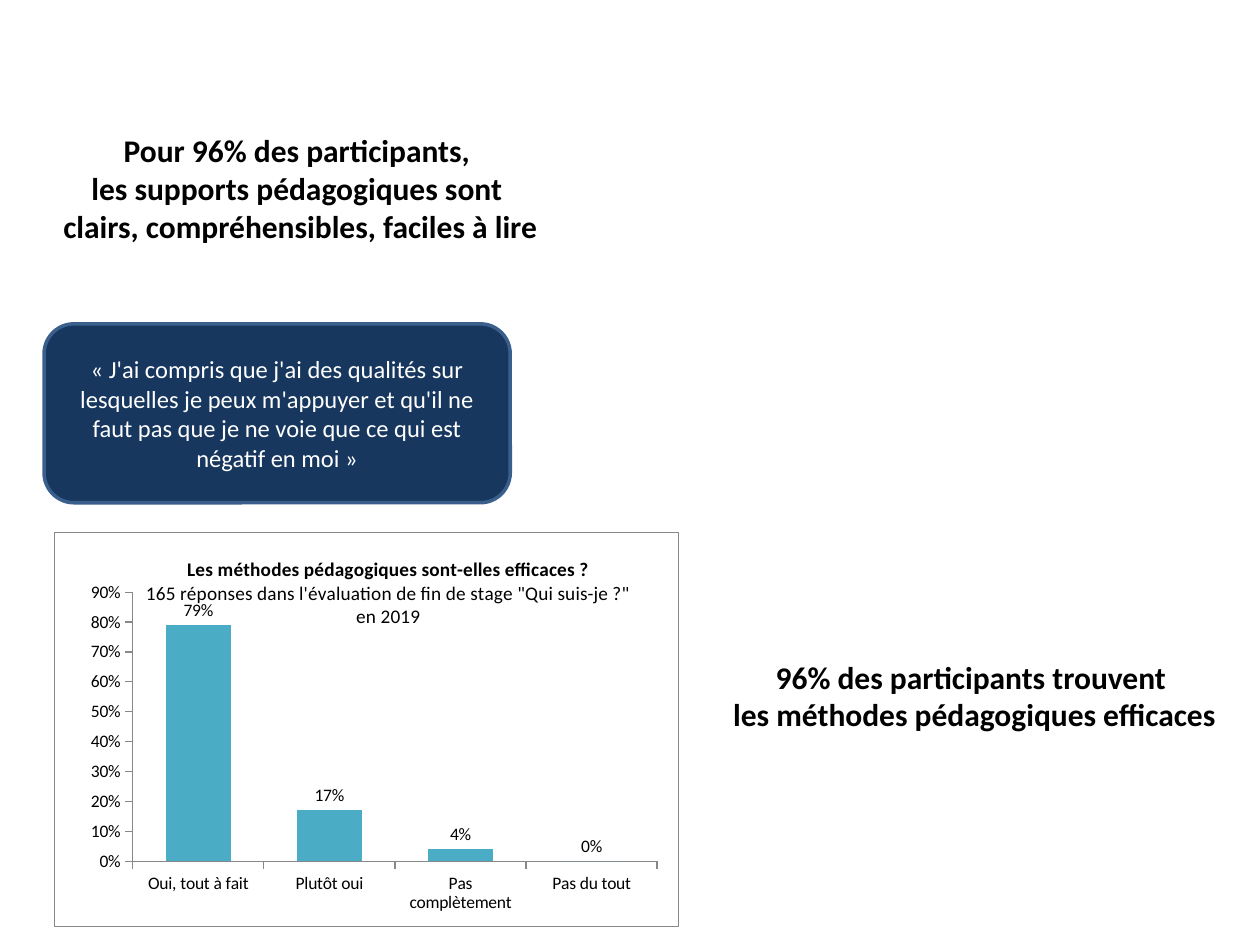
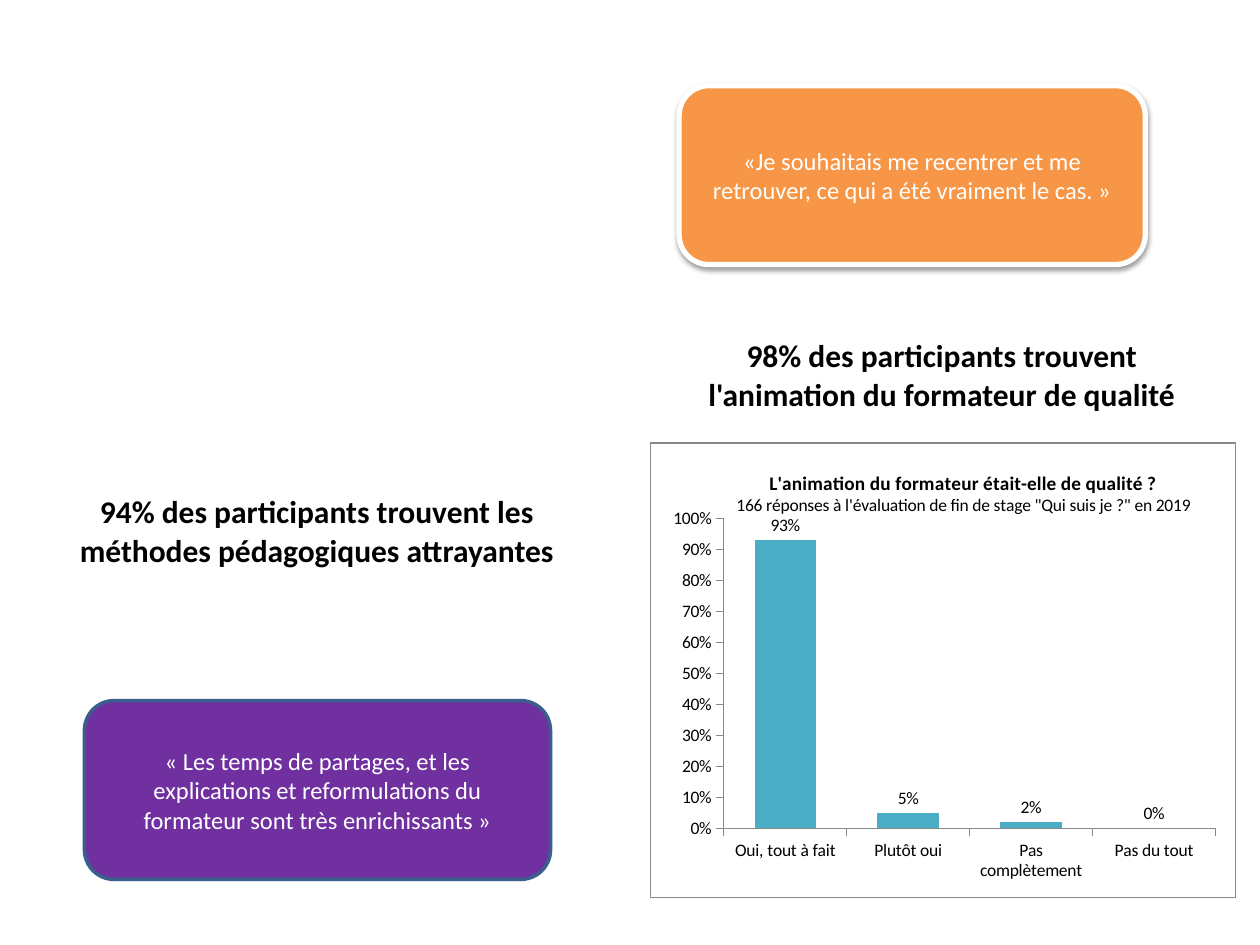
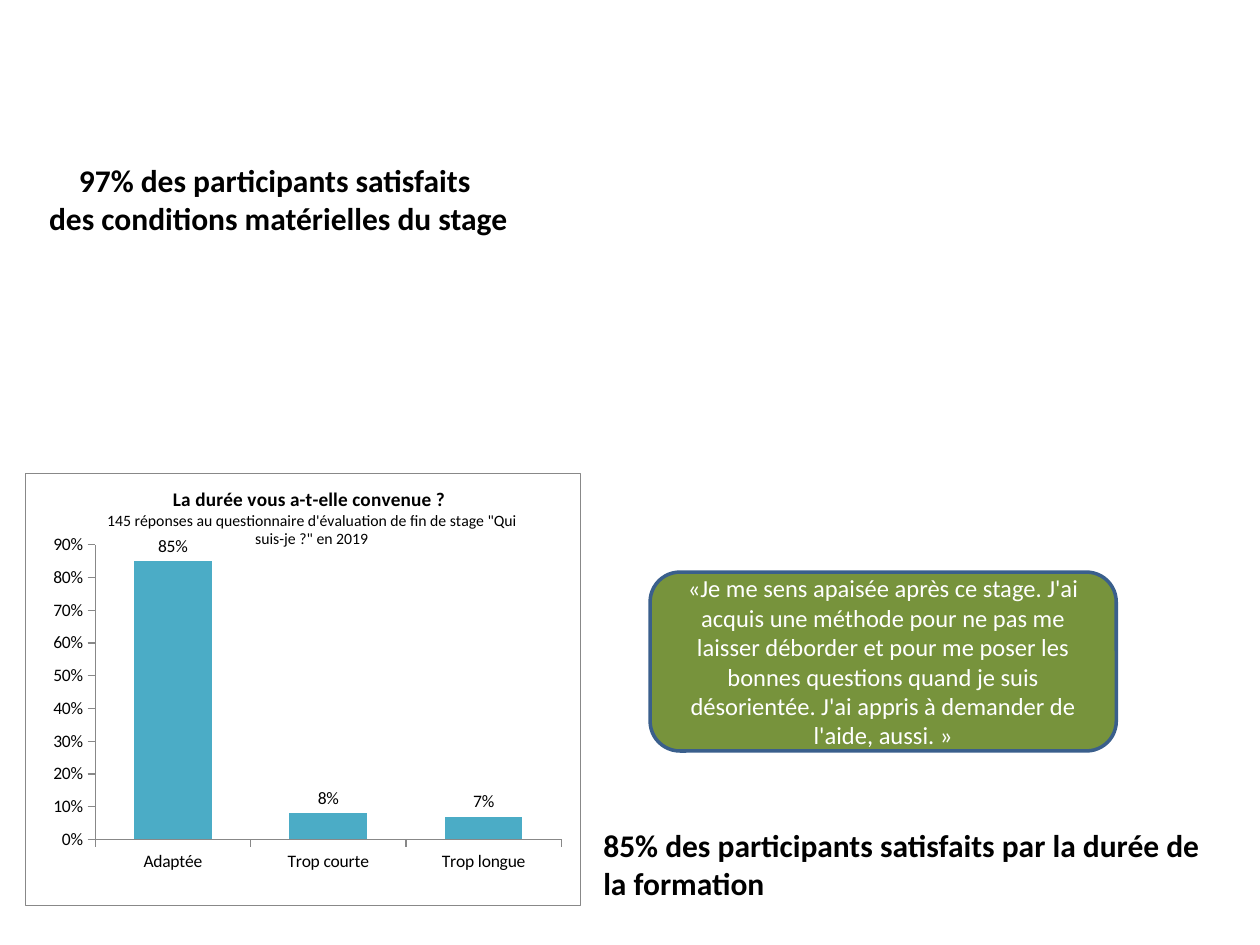
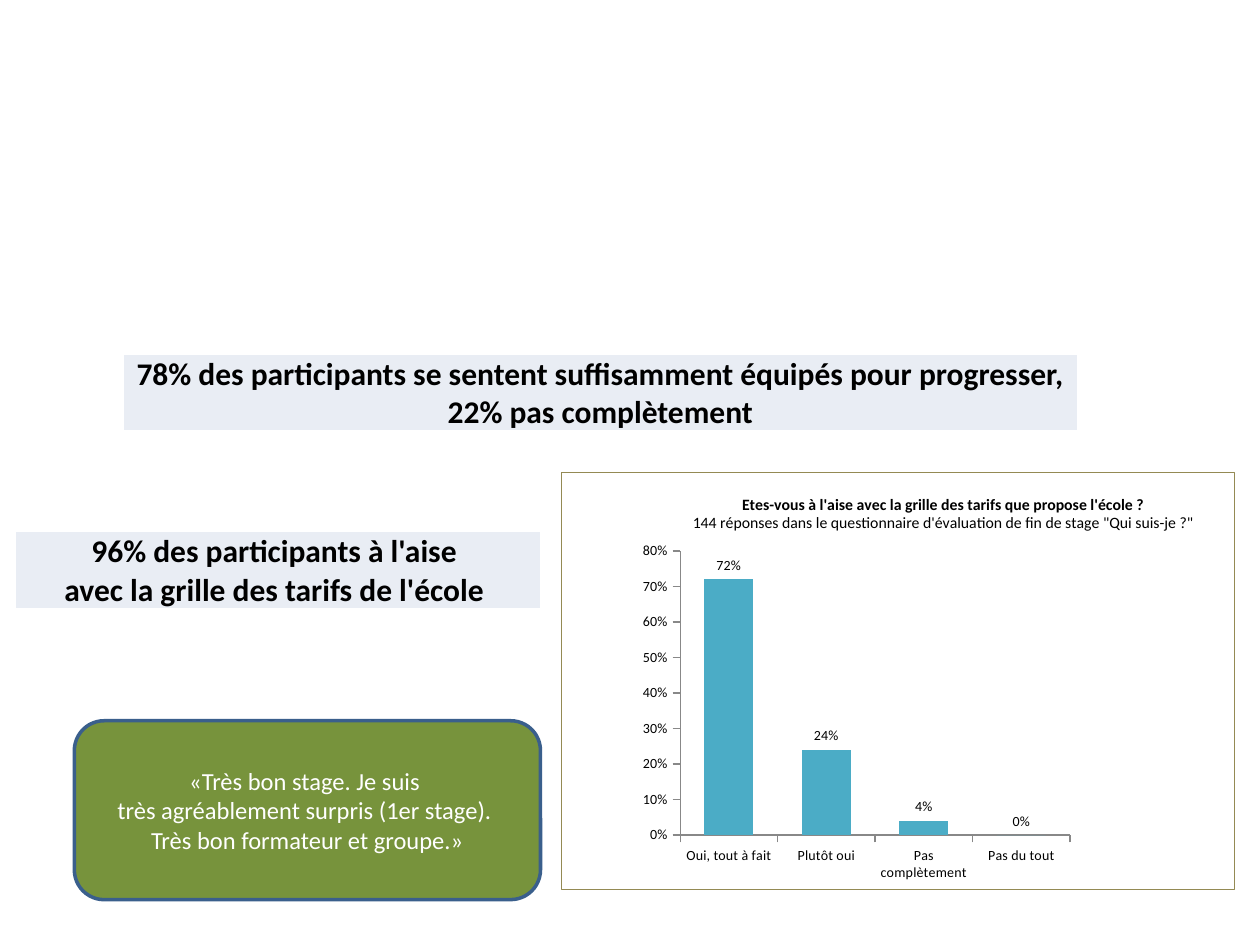
"""Build four slides of training evaluation results: statements, quotes and charts."""
from pptx import Presentation
from pptx import util as u
from pptx.chart.data import CategoryChartData
from pptx.dml.color import RGBColor
from pptx.enum import chart as ch, shapes, text
from pptx.oxml import ns, parse_xml

PX = 9144
FONT = "Calibri"
COLORS = {
    "ink": "000000", "paper": "FFFFFF", "band": "E9EDF4", "bar": "4BACC6",
    "axis": "888888", "olive": "948A54", "outline": "3A5F8C", "navy": "17375E",
    "orange": "F79646", "purple": "7030A0", "green": "77933C",
}
RGB = {name: RGBColor.from_string(value) for name, value in COLORS.items()}
ANSWERS = ["Oui, tout à fait", "Plutôt oui", "Pas complètement", "Pas du tout"]
DURATIONS = ["Adaptée", "Trop courte", "Trop longue"]


def style_text(frame, size, color, bold=False, align=text.PP_ALIGN.CENTER):
    """Format every paragraph and run of a text frame."""
    for paragraph in frame.paragraphs:
        paragraph.alignment = align
        for run in paragraph.runs:
            run.font.name = FONT
            run.font.size = u.Pt(size)
            run.font.bold = bold
            run.font.color.rgb = RGB[color]


def manual_layout(inner, **places):
    """Return a chart layout element with fractions of the chart area."""
    target = '<c:layoutTarget val="inner"/>' if inner else ""
    modes = "".join(f'<c:{axis}Mode val="edge"/>' for axis in "xy")
    values = "".join(f'<c:{key} val="{value}"/>' for key, value in places.items())
    return parse_xml(f'<c:layout {ns.nsdecls("c")}><c:manualLayout>{target}{modes}{values}'
                     "</c:manualLayout></c:layout>")


deck = Presentation()
deck.slide_width, deck.slide_height = 1000 * PX, 750 * PX
TITLE_ONLY, BLANK = deck.slide_layouts[5], deck.slide_layouts[6]
slides = [deck.slides.add_slide(layout) for layout in (TITLE_ONLY, BLANK, TITLE_ONLY, BLANK)]

CENTER, LEFT = text.PP_ALIGN.CENTER, text.PP_ALIGN.LEFT
statements = [
    (0, True, (8, 99, 461, 101), CENTER,
     "Pour 96% des participants, \vles supports pédagogiques sont \n"
     "clairs, compréhensibles, faciles à lire"),
    (0, False, (547, 517, 453, 71), CENTER,
     "96% des participants trouvent \vles méthodes pédagogiques efficaces"),
    (2, True, (-3, 123, 448, 71), CENTER,
     "97% des participants satisfaits \vdes conditions matérielles du stage"),
    (2, False, (469, 651, 500, 71), LEFT,
     "85% des participants satisfaits par la durée de la formation"),
]
for index, is_title, place, align, wording in statements:
    left, top, width, height = (PX * length for length in place)
    if is_title:
        statement = slides[index].shapes.title
        statement.left, statement.top = left, top
        statement.width, statement.height = width, height
    else:
        statement = slides[index].shapes.add_textbox(left, top, width, height)
    frame = statement.text_frame
    frame.text = wording
    frame.word_wrap = True
    frame.auto_size = text.MSO_AUTO_SIZE.SHAPE_TO_FIT_TEXT
    frame.vertical_anchor = text.MSO_ANCHOR.TOP
    style_text(frame, 18, "ink", bold=True, align=align)

charts = [
    (0, (43, 422, 496, 314), ANSWERS, (0.79, 0.17, 0.04, 0), 0.9, 10,
     "Les méthodes pédagogiques sont-elles efficaces ?", 11,
     "165 réponses dans l'évaluation de fin de stage \"Qui suis-je ?\" en 2019", 11,
     (0.14, 0.05), (0.125, 0.152, 0.841), ("axis", 0.75)),
    (1, (516, 351, 465, 362), ANSWERS, (0.93, 0.05, 0.02, 0), 1, 10,
     "L'animation du formateur était-elle de qualité ?", 11,
     "166 réponses à l'évaluation de fin de stage \"Qui suis je ?\" en 2019", 10,
     (0.14, 0.05), (0.125, 0.166, 0.841), ("axis", 0.75)),
    (2, (20, 375, 441, 344), DURATIONS, (0.85, 0.08, 0.07), 0.9, 10,
     "La durée vous a-t-elle convenue ? ", 11,
     "145 réponses au questionnaire d'évaluation de fin de stage \"Qui suis-je ?\" en 2019", 9,
     (0.14, 0.02), (0.125, 0.166, 0.841), ("axis", 0.75)),
    (3, (445, 375, 535, 331), ANSWERS, (0.72, 0.24, 0.04, 0), 0.8, 8,
     "Etes-vous à l'aise avec la grille des tarifs que propose l'école ?", 9,
     "144 réponses dans le questionnaire d'évaluation de fin de stage \"Qui suis-je ?\"", 9,
     (0.19, 0.04), (0.177, 0.188, 0.579), ("olive", 0.25)),
]
for (index, place, categories, shares, top_share, size, question, question_size,
     source, source_size, title_at, plot_at, border) in charts:
    data = CategoryChartData(number_format="0%")
    data.categories = categories
    data.add_series("Series 1", shares)
    chart = slides[index].shapes.add_chart(
        ch.XL_CHART_TYPE.COLUMN_CLUSTERED, *(PX * length for length in place), data).chart
    chart.has_legend = False
    chart.font.name = FONT
    chart.font.size = u.Pt(size)
    chart.font.color.rgb = RGB["ink"]

    title = chart.chart_title
    title.text_frame.text = f"{question}\n{source}"
    style_text(title.text_frame, source_size, "ink")
    question_font = title.text_frame.paragraphs[0].runs[0].font
    question_font.bold = True
    question_font.size = u.Pt(question_size)

    plot = chart.plots[0]
    plot.gap_width = 100
    plot.vary_by_categories = False
    bars = plot.series[0].format.fill
    bars.solid()
    bars.fore_color.rgb = RGB["bar"]
    plot.has_data_labels = True
    labels = plot.data_labels
    labels.show_value = True
    labels.position = ch.XL_LABEL_POSITION.OUTSIDE_END
    labels.number_format = "0%"
    labels.number_format_is_linked = False
    labels.font.name = FONT
    labels.font.size = u.Pt(size)
    labels.font.color.rgb = RGB["ink"]

    for axis in (chart.category_axis, chart.value_axis):
        axis.has_major_gridlines = False
        axis.major_tick_mark = ch.XL_TICK_MARK.OUTSIDE
        axis.minor_tick_mark = ch.XL_TICK_MARK.NONE
        axis.format.line.color.rgb = RGB["axis"]
        axis.format.line.width = u.Pt(0.75)
        axis.tick_labels.font.name = FONT
        axis.tick_labels.font.size = u.Pt(size)
        axis.tick_labels.font.color.rgb = RGB["ink"]
    chart.value_axis.minimum_scale = 0
    chart.value_axis.maximum_scale = top_share
    chart.value_axis.major_unit = 0.1
    chart.value_axis.tick_labels.number_format = "0%"
    chart.value_axis.tick_labels.number_format_is_linked = False

    space = chart._chartSpace
    plot_area = space.find(f'.//{ns.qn("c:plotArea")}')
    title_xml = space.find(f'.//{ns.qn("c:title")}')
    for parent in (plot_area, title_xml):
        for automatic in parent.findall(ns.qn("c:layout")):
            parent.remove(automatic)
    title_xml.find(ns.qn("c:tx")).addnext(manual_layout(False, x=title_at[0], y=title_at[1]))
    plot_left, plot_top, plot_width = plot_at
    plot_area.insert(0, manual_layout(True, x=plot_left, y=plot_top, w=plot_width, h=0.682))
    border_color, border_width = border
    white = f'<a:solidFill><a:srgbClr val="{COLORS["paper"]}"/></a:solidFill>'
    plot_area.append(parse_xml(f'<c:spPr {ns.nsdecls("c", "a")}>{white}</c:spPr>'))
    space.find(ns.qn("c:txPr")).addprevious(parse_xml(
        f'<c:spPr {ns.nsdecls("c", "a")}>{white}<a:ln w="{u.Pt(border_width)}"><a:solidFill>'
        f'<a:srgbClr val="{COLORS[border_color]}"/></a:solidFill></a:ln></c:spPr>'))

results = [
    (1, (43, 391, 417), None,
     "94% des participants trouvent les méthodes pédagogiques attrayantes"),
    (1, (539, 267, 417), "paper",
     "98% des participants trouvent l'animation du formateur de qualité"),
    (3, (98, 281, 757), "band",
     "78% des participants se sentent suffisamment équipés pour progresser, "
     "22% pas complètement"),
    (3, (12, 422, 417), "band",
     "96% des participants à l'aise \navec la grille des tarifs de l'école "),
]
for index, (left, top, width), fill, wording in results:
    table = slides[index].shapes.add_table(
        1, 1, left * PX, top * PX, width * PX, 61 * PX).table
    table.first_row = table.horz_banding = False
    cell = table.cell(0, 0)
    cell.text_frame.text = wording
    cell.vertical_anchor = text.MSO_ANCHOR.BOTTOM
    cell.margin_left = cell.margin_right = cell.margin_top = PX
    cell.margin_bottom = 0
    style_text(cell.text_frame, 18, "ink", bold=True)
    if fill:
        cell.fill.solid()
        cell.fill.fore_color.rgb = RGB[fill]
    else:
        cell.fill.background()
    for position, side in enumerate("LRTB"):
        cell._tc.get_or_add_tcPr().insert(position, parse_xml(
            f'<a:ln{side} {ns.nsdecls("a")} w="{u.Pt(1)}"><a:solidFill>'
            f'<a:srgbClr val="{COLORS["paper"]}"/></a:solidFill></a:ln{side}>'))

quotes = [
    (0, (35, 257), "navy", "outline", 2,
     "« J'ai compris que j'ai des qualités sur lesquelles je peux m'appuyer et qu'il ne "
     "faut pas que je ne voie que ce qui est négatif en moi »"),
    (1, (539, 68), "orange", "paper", 3,
     "«Je souhaitais me recentrer et me retrouver, ce qui a été vraiment le cas. »"),
    (1, (67, 556), "purple", "outline", 2,
     "« Les temps de partages, et les explications et reformulations du formateur "
     "sont très enrichissants »"),
    (2, (516, 454), "green", "outline", 2,
     "«Je me sens apaisée après ce stage. J'ai acquis une méthode pour ne pas me laisser "
     "déborder et pour me poser les bonnes questions quand je suis désorientée. "
     "J'ai appris à demander de l'aide, aussi. »"),
    (3, (59, 572), "green", "outline", 2,
     "«Très bon stage. Je suis \vtrès agréablement surpris (1er stage). \v"
     "Très bon formateur et groupe.»"),
]
for index, (left, top), fill, outline, weight, wording in quotes:
    quote = slides[index].shapes.add_shape(
        shapes.MSO_SHAPE.ROUNDED_RECTANGLE, left * PX, top * PX, 370 * PX, 142 * PX)
    quote.shadow.inherit = False
    quote.fill.solid()
    quote.fill.fore_color.rgb = RGB[fill]
    quote.line.color.rgb = RGB[outline]
    quote.line.width = u.Pt(weight)
    quote.text_frame.text = wording
    quote.text_frame.word_wrap = True
    quote.text_frame.vertical_anchor = text.MSO_ANCHOR.MIDDLE
    style_text(quote.text_frame, 14, "paper")
    if fill == "orange":
        quote._element.spPr.find(ns.qn("a:effectLst")).append(parse_xml(
            f'<a:outerShdw {ns.nsdecls("a")} blurRad="{u.Pt(3.1)}" dist="{u.Pt(1.6)}" '
            f'dir="5400000" rotWithShape="0"><a:srgbClr val="{COLORS["ink"]}">'
            '<a:alpha val="38000"/></a:srgbClr></a:outerShdw>'))

deck.save("out.pptx")
